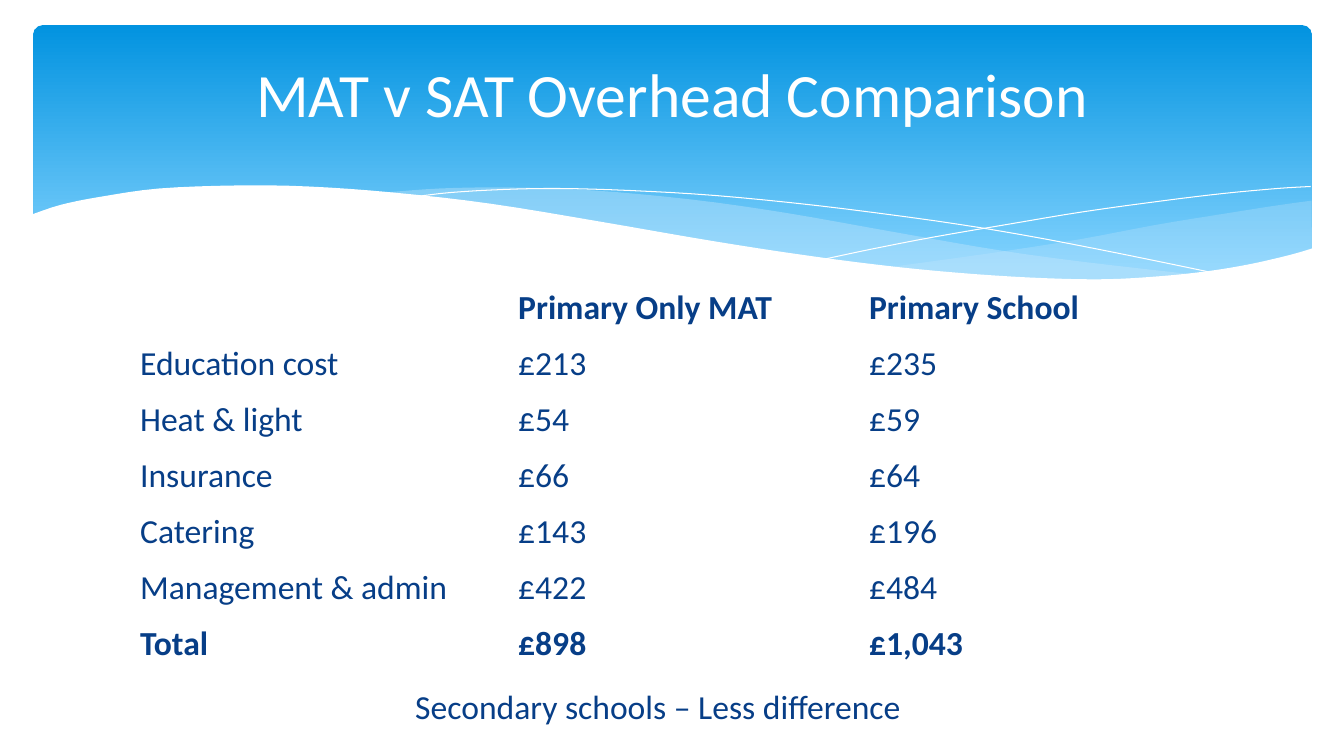
import pptx
import pptx.util
from pptx.dml.color import RGBColor
from pptx.enum.text import MSO_ANCHOR, PP_ALIGN
from pptx.enum.shapes import MSO_SHAPE
from pptx.oxml.ns import qn
from lxml import etree

Inches, Pt = pptx.util.Inches, pptx.util.Pt

COLORS = {"white": "FFFFFF", "navy": "073E87", "sky_top": "0293E0",
          "sky_bottom": "83D3FE", "pale": "C6E7FC"}
TITLE = {"size": Pt(44), "bold": False}
BODY = {"size": Pt(24), "bold": False}
STRONG = {"size": Pt(24), "bold": True}

# Edges of the waves, in inches from the corner of the wave band
FRONT_EDGE = [(0, .29), (.3, .19), (.7, .11), (1.27, .03), (2.04, 0), (2.75, .01),
              (3.59, .07), (4.55, .18), (5.65, .36), (6.75, .55), (7.73, .7),
              (8.6, .81), (9.37, .88), (10.06, .92), (10.66, .93), (11.2, .9),
              (11.67, .85), (12.09, .78), (12.48, .69), (12.72, .62)]
RIGHT_TOP = [(8.51, .81), (9.1, .73), (9.73, .64), (10.42, .53), (11.16, .39),
             (11.77, .29), (12.34, .2), (12.7, .15)]
RIGHT_BOTTOM = [(12.7, .63), (12.26, .75), (11.76, .85), (11.19, .91),
                (10.54, .94), (9.78, .92), (9.09, .87), (8.51, .81)]
MIDDLE_TOP = [(3.51, .07), (4.06, .03), (4.75, .02), (5.58, .05), (6.55, .14),
              (7.47, .27), (8.6, .47), (9.58, .64), (10.45, .76), (11.59, .89)]
MIDDLE_BOTTOM = [(11.59, .89), (10.86, .94), (10.15, .94), (9.32, .9), (8.36, .82),
                 (7.24, .68), (6.23, .48), (5.08, .27), (4.25, .15), (3.51, .07)]
FALLING_LINE = [(3.82, .11), (4.16, .07), (4.68, .04), (5.24, .03), (5.94, .05),
                (6.79, .1), (7.8, .2), (8.96, .35), (9.83, .49), (10.77, .67),
                (11.79, .88)]
RISING_LINE = [(7.87, .73), (8.39, .62), (8.96, .51), (9.66, .39), (10.44, .26),
               (11.24, .15), (11.82, .08), (12.36, .03), (12.69, .01)]

COSTS = [("", "Primary Only MAT", "Primary School"),
         ("Education cost", "£213", "£235"),
         ("Heat & light", "£54", "£59"),
         ("Insurance", "£66", "£64"),
         ("Catering", "£143", "£196"),
         ("Management & admin", "£422", "£484"),
         ("Total", "£898", "£1,043")]


def rgb(name):
    return RGBColor.from_string(COLORS[name])


def write(tf, text, fmt, color, align=PP_ALIGN.LEFT):
    p = tf.paragraphs[0]
    p.alignment = align
    r = p.add_run()
    r.text = text
    r.font.name = "Calibri"
    r.font.color.rgb = rgb(color)
    for key, value in fmt.items():
        setattr(r.font, key, value)


def add_text(s, box, text, fmt, color, align, anchor):
    tf = s.shapes.add_textbox(*map(Inches, box)).text_frame
    tf.word_wrap = True
    tf.vertical_anchor = anchor
    write(tf, text, fmt, color, align)


def smooth(points, steps=4):
    """Run a Catmull-Rom curve through the points."""
    padded = [points[0], *points, points[-1]]
    curve = [points[0]]
    for a, b, c, d in zip(padded, padded[1:], padded[2:], padded[3:]):
        for i in range(1, steps + 1):
            t = i / steps
            curve.append(tuple(
                (2 * q + (m - k) * t + (2 * k - 5 * q + 4 * m - n) * t ** 2
                 + (3 * q - k - 3 * m + n) * t ** 3) / 2
                for k, q, m, n in zip(a, b, c, d)))
    return curve


def add_outline(s, x, y, points, closed):
    points = [(Inches(x + px), Inches(y + py)) for px, py in points]
    builder = s.shapes.build_freeform(*points[0])
    builder.add_line_segments(points[1:], close=closed)
    sp = builder.convert_to_shape()
    sp.shadow.inherit = False
    return sp


def add_wave(s, x, y, points, color, alpha=100):
    sp = add_outline(s, x, y, points, True)
    sp.fill.solid()
    sp.fill.fore_color.rgb = rgb(color)
    sp.line.fill.background()
    if alpha < 100:
        clr = sp.fill._xPr.find(".//" + qn("a:srgbClr"))
        etree.SubElement(clr, qn("a:alpha"), val=str(alpha * 1000))


def add_banner(s, box):
    # Gradient panel
    x, y, w, h = box
    sp = s.shapes.add_shape(MSO_SHAPE.ROUNDED_RECTANGLE, *map(Inches, box))
    sp.adjustments[0] = 0.034
    sp.shadow.inherit = False
    sp.line.fill.background()
    sp.fill.gradient()
    sp.fill.gradient_angle = 270
    for stop, color, pos in zip(sp.fill.gradient_stops,
                                ("sky_top", "sky_bottom"), (0, 0.9)):
        stop.color.rgb = rgb(color)
        stop.position = pos

    # Waves and hairlines over its lower edge
    wx, wy = x - 0.02, y + 1.59
    add_wave(s, wx, wy, smooth(RIGHT_TOP) + smooth(RIGHT_BOTTOM), "pale", 29)
    add_wave(s, wx, wy, smooth(MIDDLE_TOP) + smooth(MIDDLE_BOTTOM), "pale", 40)
    for points in (FALLING_LINE, RISING_LINE):
        sp = add_outline(s, wx, wy, smooth(points), False)
        sp.fill.background()
        sp.line.color.rgb = rgb("white")
        sp.line.width = Pt(0)
    add_wave(s, wx, wy, smooth(FRONT_EDGE) + [(12.72, 1.45), (0, 1.45)], "white")

    # Title
    add_text(s, (x + 0.34, y + 0.05, w - 0.68, 1.25), "MAT v SAT Overhead Comparison",
             TITLE, "white", PP_ALIGN.CENTER, MSO_ANCHOR.MIDDLE)


def add_cost_table(s, box):
    table = s.shapes.add_table(len(COSTS), len(COSTS[0]), *map(Inches, box)).table
    table.first_row = table.horz_banding = False
    for col, width in zip(table.columns, (3.75, 3.48, 4.42)):
        col.width = Inches(width)
    margins = {"margin_left": 0.14, "margin_right": 0.14,
               "margin_top": 0.07, "margin_bottom": 0.07}
    for i, row in enumerate(COSTS):
        fmt = STRONG if i in (0, len(COSTS) - 1) else BODY
        for j, text in enumerate(row):
            cell = table.cell(i, j)
            cell.fill.background()
            for key, value in margins.items():
                setattr(cell, key, Inches(value))
            if text:
                write(cell.text_frame, text, fmt, "navy")


def main():
    prs = pptx.Presentation()
    prs.slide_width, prs.slide_height = Inches(13.33), Inches(7.5)
    s = prs.slides.add_slide(prs.slide_layouts[6])
    add_banner(s, (0.33, 0.25, 12.68, 2.7))
    add_cost_table(s, (1.25, 2.78, 11.65, 3.89))
    # Closing remark
    add_text(s, (4.02, 6.76, 5.3, 0.5), "Secondary schools – Less difference",
             BODY, "navy", PP_ALIGN.LEFT, MSO_ANCHOR.TOP)
    prs.save("out.pptx")


if __name__ == "__main__":
    main()
